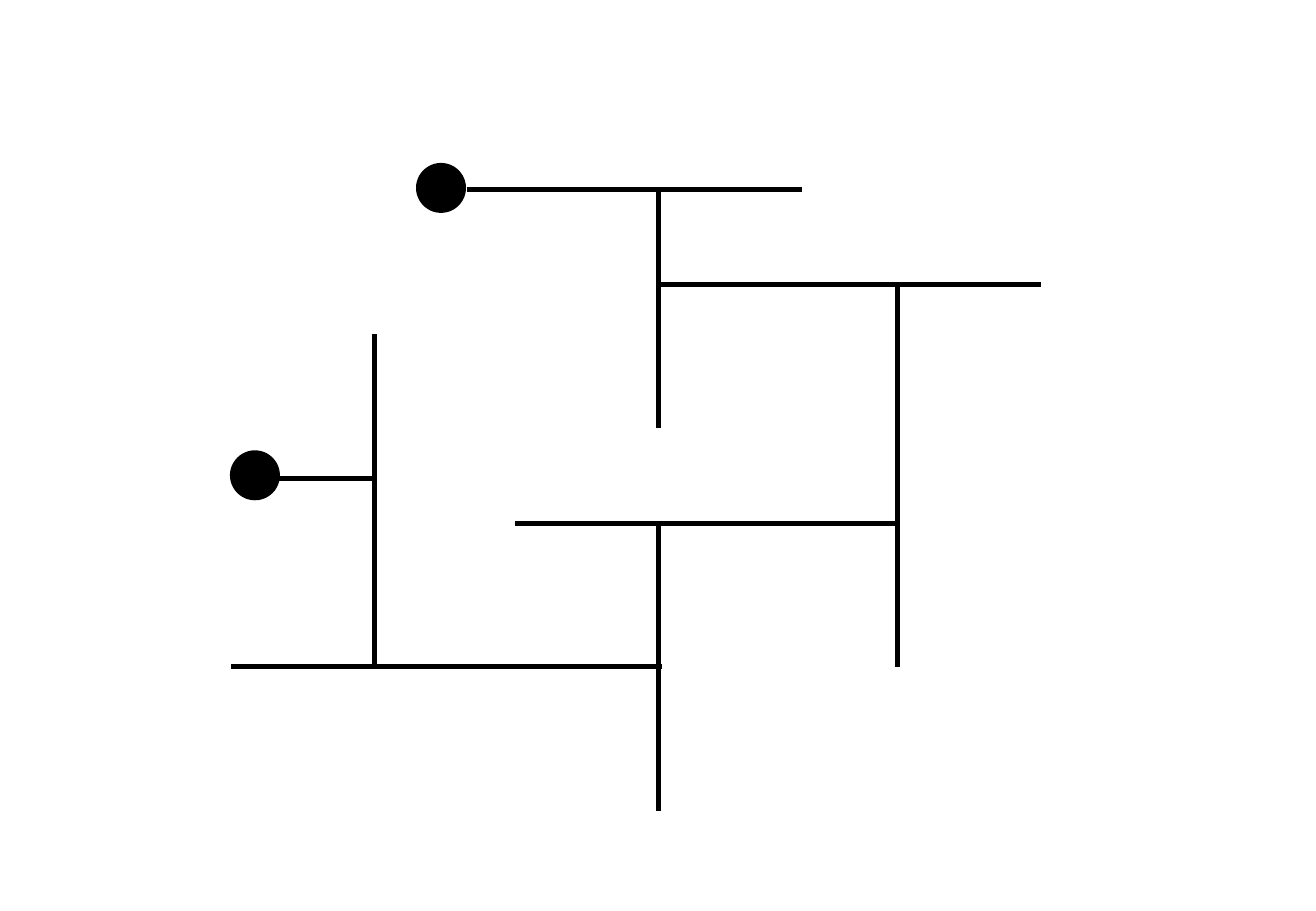
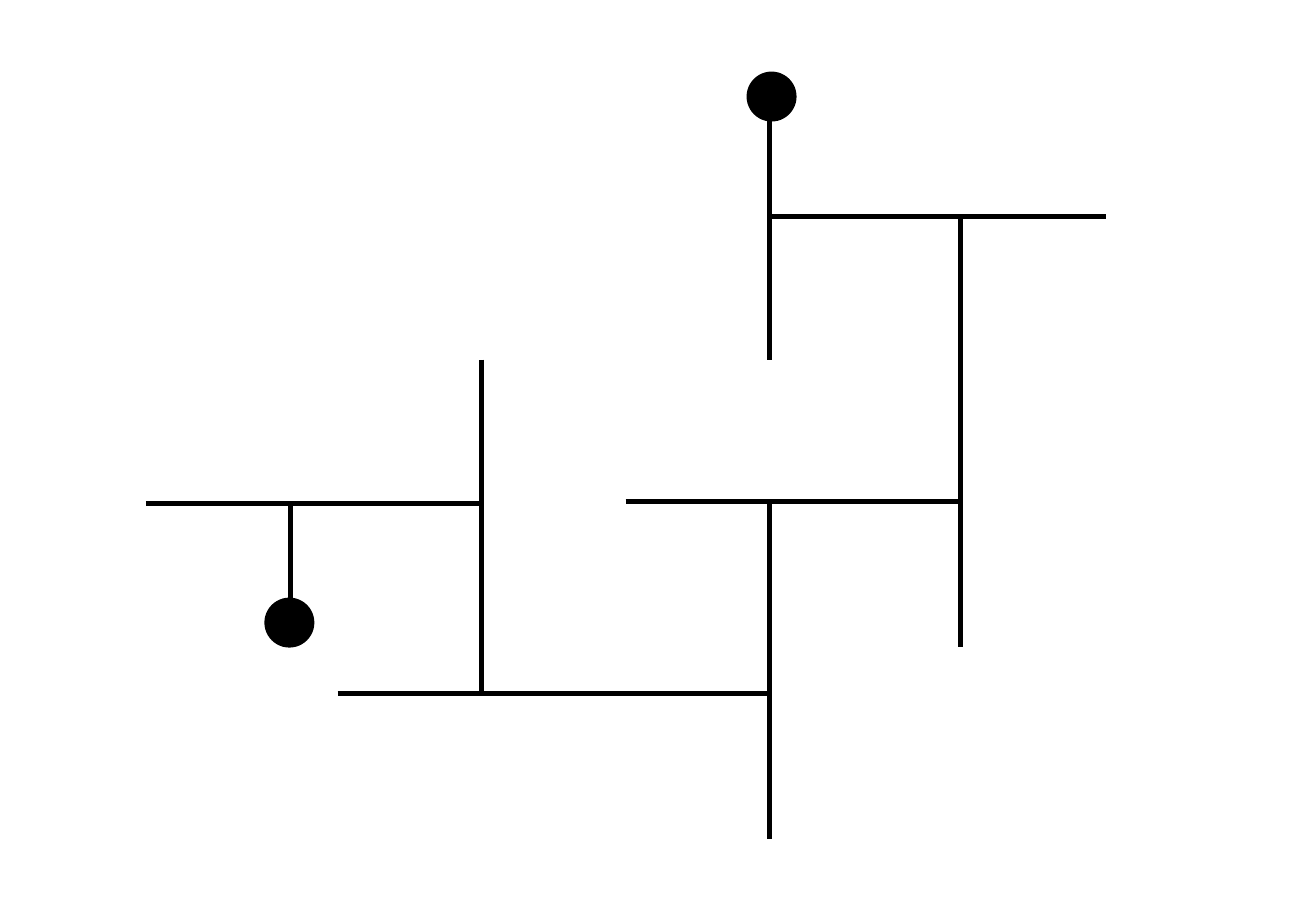
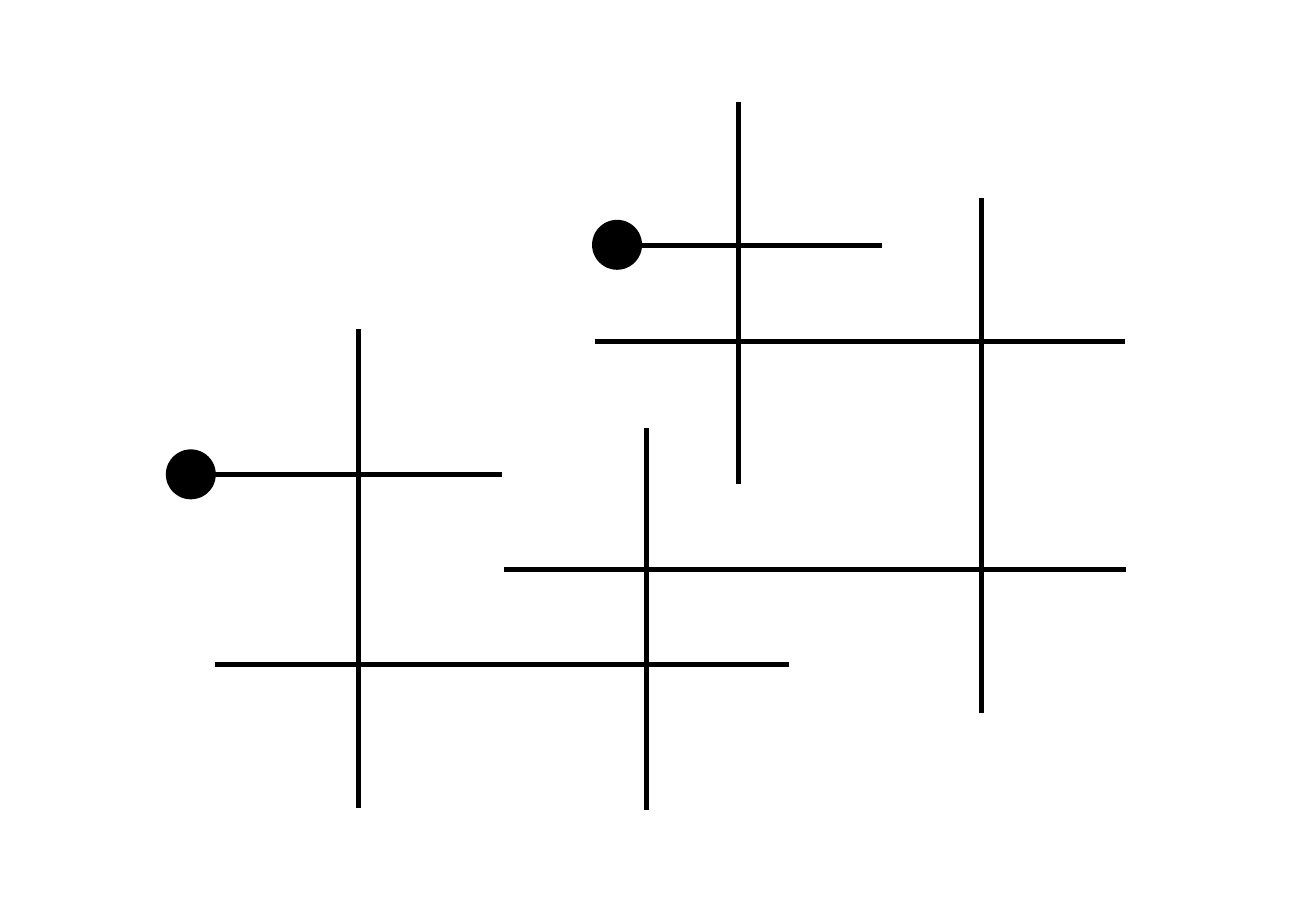
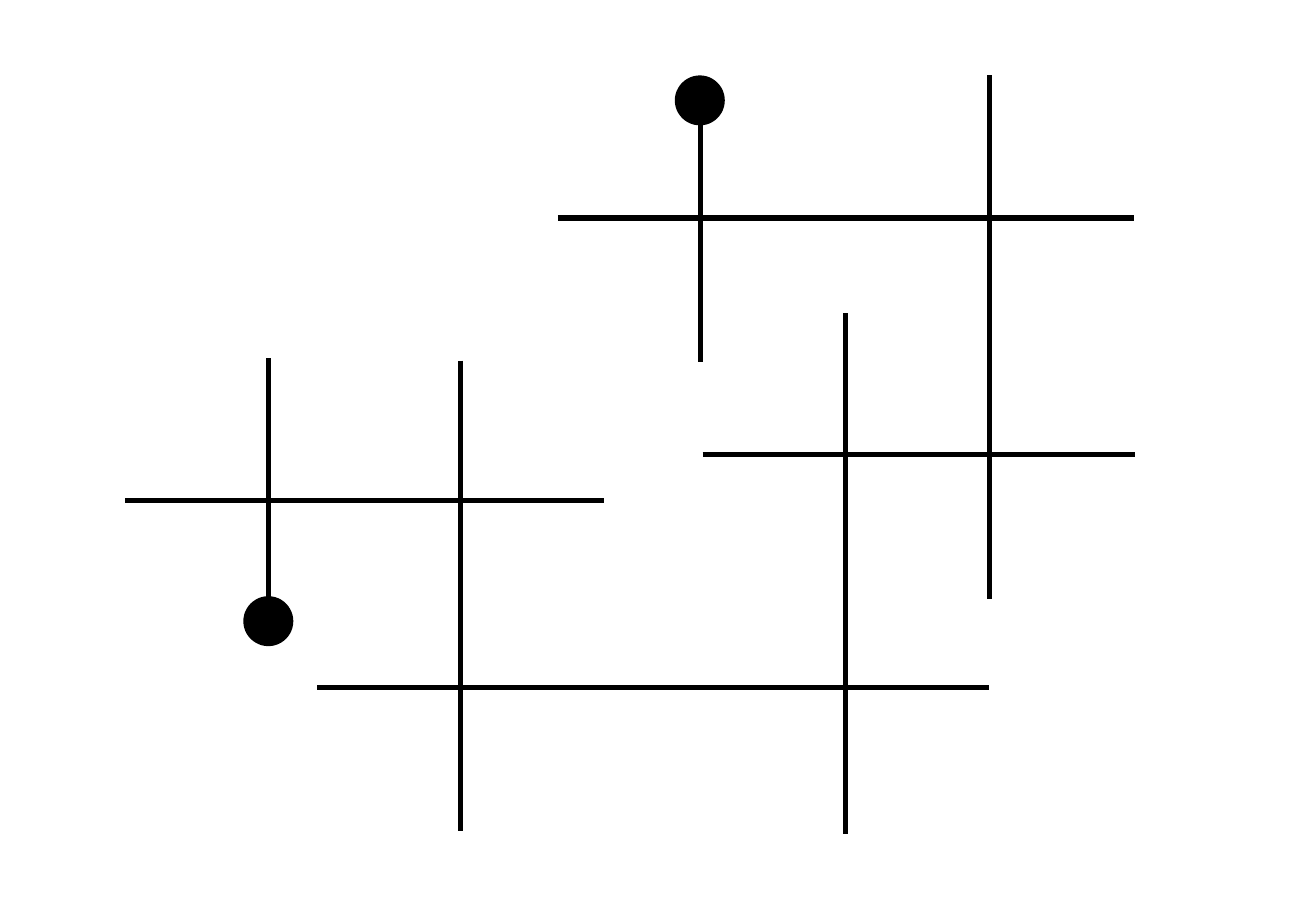
from dataclasses import dataclass
from itertools import accumulate, pairwise

from pptx import Presentation
from pptx.dml.color import RGBColor
from pptx.enum.shapes import MSO_CONNECTOR, MSO_SHAPE
from pptx.oxml.xmlchemy import OxmlElement
from pptx.shapes.shapetree import GroupShapes
from pptx.util import Cm, Pt


@dataclass(frozen=True)
class Theme:
    ink: RGBColor = RGBColor(0, 0, 0)
    wire_width: float = 3
    outline_width: float = 1
    dot_diameter: float = 1.01


@dataclass(frozen=True)
class Dot:
    """Centre of a terminal dot, in centimetres."""
    x: float
    y: float


@dataclass(frozen=True)
class Wire:
    """Straight chain of segments from its left or top end, in centimetres."""
    x: float
    y: float
    spans: tuple[float, ...]


@dataclass(frozen=True)
class Diagram:
    dots: tuple[Dot, ...]
    across: tuple[Wire, ...]
    down: tuple[Wire, ...]


THEME = Theme()
PAGE_WIDTH, PAGE_HEIGHT = Cm(27.51), Cm(19.05)

DIAGRAMS = (
    Diagram(
        dots=(Dot(9.22, 3.93), Dot(5.33, 9.94)),
        across=(
            Wire(9.76, 3.97, (4, 3)),
            Wire(13.77, 5.94, (5, 3)),
            Wire(5.82, 10.01, (2,)),
            Wire(10.77, 10.95, (3, 5)),
            Wire(4.83, 13.94, (3, 6)),
        ),
        down=(
            Wire(7.82, 6.99, (3, 4)),
            Wire(13.77, 3.96, (2, 3)),
            Wire(13.77, 10.95, (3, 3)),
            Wire(18.77, 5.94, (5, 3)),
        ),
    ),
    Diagram(
        dots=(Dot(6.05, 13.02), Dot(16.13, 2.02)),
        across=(
            Wire(16.12, 4.52, (4, 3)),
            Wire(13.08, 10.49, (3, 4)),
            Wire(3.05, 10.53, (3, 4)),
            Wire(7.06, 14.5, (3, 6)),
        ),
        down=(
            Wire(6.07, 10.5, (2,)),
            Wire(10.06, 7.52, (3, 4)),
            Wire(16.08, 2.52, (2, 3)),
            Wire(16.08, 10.54, (4, 3)),
            Wire(20.07, 4.52, (6, 3)),
        ),
    ),
    Diagram(
        dots=(Dot(12.9, 5.12), Dot(3.99, 9.92)),
        across=(
            Wire(13.43, 5.13, (2, 3)),
            Wire(12.44, 7.14, (3, 5.08, 3)),
            Wire(4.5, 9.92, (3, 3)),
            Wire(10.54, 11.91, (3, 7, 3)),
            Wire(4.5, 13.89, (3, 6, 3)),
        ),
        down=(
            Wire(7.49, 6.89, (3, 4, 3)),
            Wire(13.51, 8.94, (3, 2, 3)),
            Wire(15.44, 2.13, (3, 2, 3)),
            Wire(20.52, 4.14, (3, 4.77, 3)),
        ),
    ),
    Diagram(
        dots=(Dot(5.61, 12.99), Dot(14.63, 2.1)),
        across=(
            Wire(11.66, 4.56, (3, 6.05, 3)),
            Wire(14.69, 9.5, (3, 3.03, 3)),
            Wire(2.62, 10.47, (3, 4, 3)),
            Wire(6.63, 14.38, (3, 8.05, 3)),
        ),
        down=(
            Wire(5.61, 7.49, (3, 2)),
            Wire(9.63, 7.54, (3, 3.84, 3)),
            Wire(14.64, 2.57, (2, 3)),
            Wire(17.68, 6.55, (3, 4.88, 3)),
            Wire(20.68, 1.57, (3, 4.95, 3)),
        ),
    ),
)


def draw_dot(shapes: GroupShapes, dot: Dot) -> None:
    size = THEME.dot_diameter
    disc = shapes.add_shape(
        MSO_SHAPE.FLOWCHART_CONNECTOR,
        Cm(dot.x - size / 2), Cm(dot.y - size / 2), Cm(size), Cm(size),
    )
    disc.shadow.inherit = False
    disc.fill.solid()
    disc.fill.fore_color.rgb = THEME.ink
    disc.line.color.rgb = THEME.ink
    disc.line.width = Pt(THEME.outline_width)


def draw_segment(shapes: GroupShapes, x1: float, y1: float, x2: float, y2: float) -> None:
    segment = shapes.add_connector(MSO_CONNECTOR.STRAIGHT, Cm(x1), Cm(y1), Cm(x2), Cm(y2))
    segment.line.color.rgb = THEME.ink
    segment.line.width = Pt(THEME.wire_width)
    segment._element.spPr.append(OxmlElement("a:effectLst"))


def draw_diagram(shapes: GroupShapes, diagram: Diagram) -> None:
    for dot in diagram.dots:
        draw_dot(shapes, dot)
    for wire in diagram.across:
        for left, right in pairwise(accumulate(wire.spans, initial=wire.x)):
            draw_segment(shapes, left, wire.y, right, wire.y)
    for wire in diagram.down:
        for top, bottom in pairwise(accumulate(wire.spans, initial=wire.y)):
            draw_segment(shapes, wire.x, top, wire.x, bottom)


def main() -> None:
    deck = Presentation()
    deck.slide_width, deck.slide_height = PAGE_WIDTH, PAGE_HEIGHT
    blank = deck.slide_layouts[6]
    for diagram in DIAGRAMS:
        page = deck.slides.add_slide(blank)
        draw_diagram(page.shapes.add_group_shape().shapes, diagram)
    deck.save("out.pptx")


if __name__ == "__main__":
    main()
